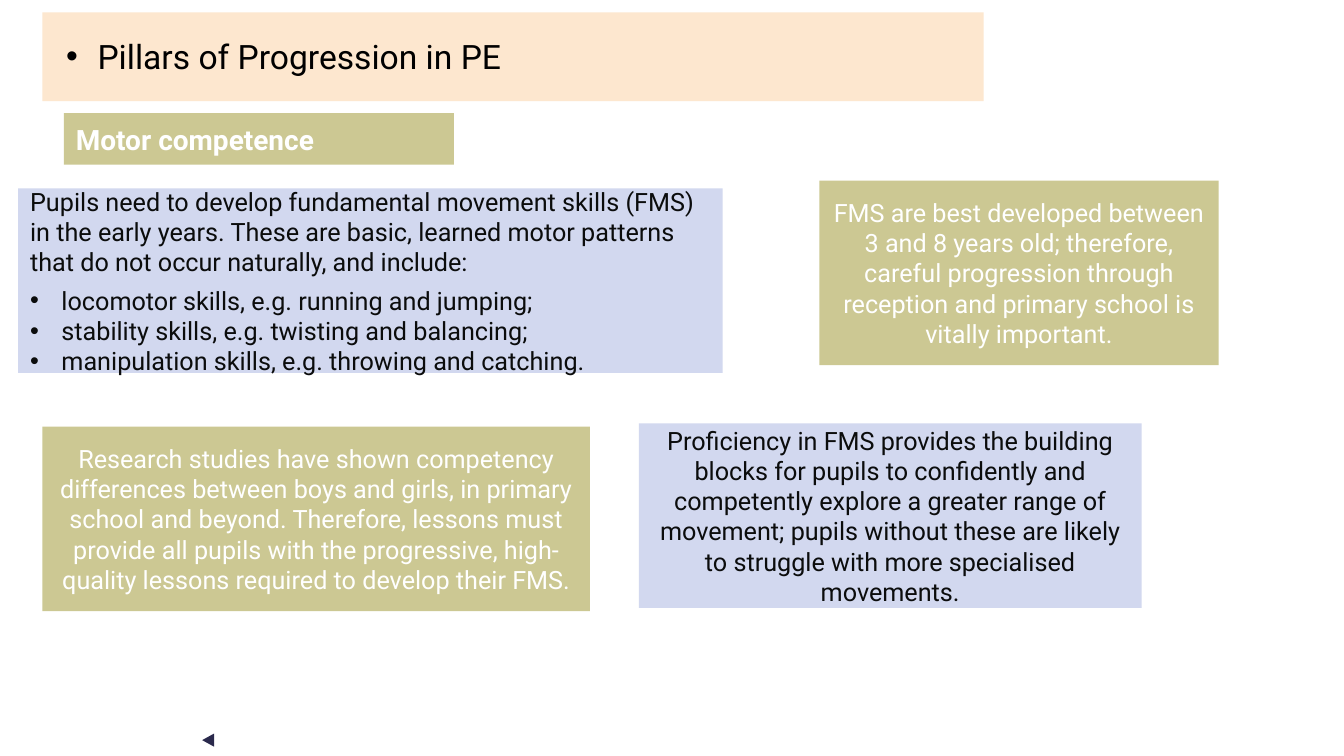
from pptx import Presentation
from pptx.dml.color import RGBColor as Rgb
from pptx.enum.shapes import MSO_SHAPE as Kind
from pptx.enum.text import MSO_ANCHOR as Anchor, PP_ALIGN as Align
from pptx.oxml.ns import qn
from pptx.util import Cm, Pt
from lxml.etree import SubElement

PEACH = Rgb(0xFD, 0xE7, 0xCF)
OLIVE = Rgb(0xCC, 0xC8, 0x93)
LILAC = Rgb(0xD2, 0xD8, 0xEF)
NAVY = Rgb(0x2A, 0x29, 0x4C)
INK = Rgb(0x0B, 0x0C, 0x0C)
BLACK = Rgb(0, 0, 0)
WHITE = Rgb(0xFF, 0xFF, 0xFF)

NEED = (
    "Pupils need to develop fundamental movement skills (FMS) in the early years. "
    "These are basic, learned motor patterns that do not occur naturally, and include:"
)
SKILLS = [
    "locomotor skills, e.g. running and jumping;",
    "stability skills, e.g. twisting and balancing;",
    "manipulation skills, e.g. throwing and catching.",
]
AGES = (
    "FMS are best developed between 3 and 8 years old; therefore, careful progression "
    "through reception and primary school is vitally important."
)
STUDY = (
    "Research studies have shown competency differences between boys and girls, in "
    "primary school and beyond. Therefore, lessons must provide all pupils with the "
    "progressive, high-quality lessons required to develop their FMS."
)
BLOCKS = (
    "Proficiency in FMS provides the building blocks for pupils to confidently and "
    "competently explore a greater range of movement; pupils without these are likely "
    "to struggle with more specialised movements."
)


def add_form(slide, kind, box, fill):
    form = slide.shapes.add_shape(kind, *map(Cm, box))
    form.shadow.inherit = False
    form.fill.solid()
    form.fill.fore_color.rgb = fill
    form.line.fill.background()
    return form


def add_bullet(para):
    props = para._p.get_or_add_pPr()
    props.set("marL", str(Cm(0.79)))
    props.set("indent", str(-Cm(0.79)))
    SubElement(props, qn("a:buFont")).set("typeface", "Arial")
    SubElement(props, qn("a:buChar")).set("char", "•")


def add_panel(slide, box, fill, lines, color, size=18, bold=False,
              align=Align.LEFT, inset=0.3, anchor=Anchor.MIDDLE, dots=()):
    frame = add_form(slide, Kind.RECTANGLE, box, fill).text_frame
    frame.word_wrap = True
    frame.vertical_anchor = anchor
    frame.margin_left = frame.margin_right = Cm(inset)
    frame.margin_top = frame.margin_bottom = Cm(inset)
    frame.text = "\n".join([*lines, *dots])
    for index, para in enumerate(frame.paragraphs):
        para.alignment = align
        if index >= len(lines):
            add_bullet(para)
        elif dots:
            para.space_after = Pt(6)
        for run in para.runs:
            run.font.name = "Roboto"
            run.font.size = Pt(size)
            run.font.bold = bold
            run.font.color.rgb = color
    return frame


def add_head(slide, left, top):
    frame = add_panel(slide, (left, top, 23.72, 2.24), PEACH,
                      ["Pillars of Progression in PE"], BLACK, size=24,
                      align=Align.JUSTIFY, inset=0.6, anchor=Anchor.TOP)
    add_bullet(frame.paragraphs[0])
    add_panel(slide, (left + 0.54, top + 2.54, 9.83, 1.3), OLIVE,
              ["Motor competence"], WHITE, size=20, bold=True)


def add_body(slide, left, top):
    high = 4.65
    add_panel(slide, (left, top + 0.2, 17.75, high), LILAC, [NEED], INK, dots=SKILLS)
    cards = [
        (20.19, 0, 10.06, OLIVE, AGES, WHITE),
        (0.61, 6.2, 13.8, OLIVE, STUDY, WHITE),
        (15.64, 6.12, 12.67, LILAC, BLOCKS, INK),
    ]
    for right, down, wide, fill, text, color in cards:
        add_panel(slide, (left + right, top + down, wide, high), fill,
                  [text], color, align=Align.CENTER)


def add_mark(slide, left, top):
    mark = add_form(slide, Kind.ISOSCELES_TRIANGLE, (left, top, 0.33, 0.3), NAVY)
    mark.rotation = 270


def main():
    deck = Presentation()
    deck.slide_width, deck.slide_height = Cm(33.87), Cm(19.05)
    slide = deck.slides.add_slide(deck.slide_layouts[6])
    add_mark(slide, 5.08, 18.5)
    add_body(slide, 0.46, 4.55)
    add_head(slide, 1.07, 0.31)
    deck.save("out.pptx")


if __name__ == "__main__":
    main()
